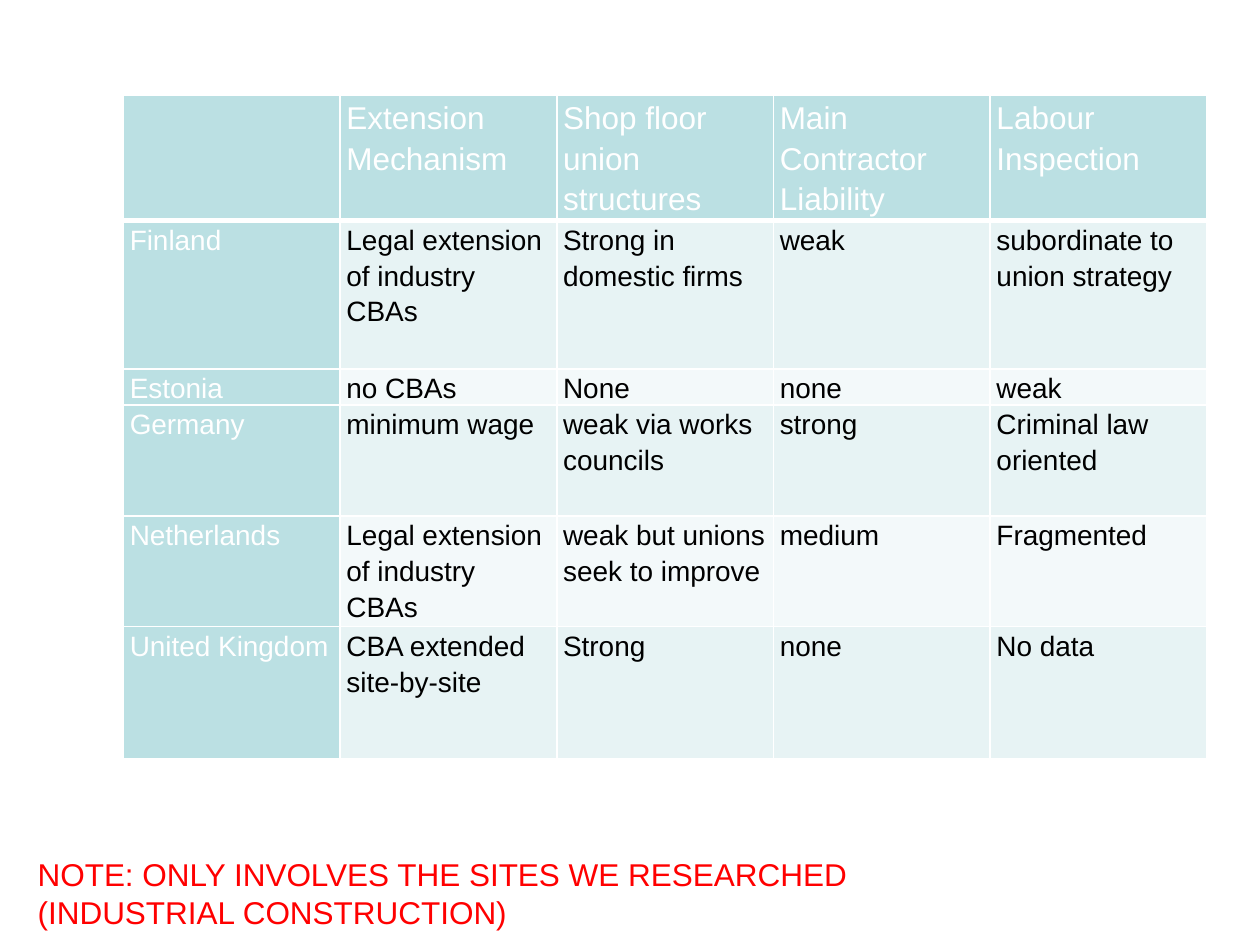
from lxml.etree import SubElement
from pptx import Presentation
from pptx.dml.color import RGBColor
from pptx.enum.text import MSO_AUTO_SIZE
from pptx.oxml.ns import qn
from pptx.util import Inches, Pt

COLORS = {"header": "BBE0E3", "odd": "E7F3F4", "even": "F3F9FA",
          "white": "FFFFFF", "black": "000000", "note": "FF0000"}
FONT = "Arial"
ROWS = [
    ("", "Extension Mechanism", "Shop floor union structures",
     "Main Contractor Liability", "Labour Inspection"),
    ("Finland", "Legal extension of industry CBAs", "Strong in domestic firms",
     "weak", "subordinate to union strategy"),
    ("Estonia", "no CBAs", "None", "none", "weak"),
    ("Germany", "minimum wage", "weak via works councils", "strong",
     "Criminal law oriented"),
    ("Netherlands", "Legal extension of industry CBAs",
     "weak but unions seek to improve", "medium", "Fragmented"),
    ("United Kingdom", "CBA extended site-by-site", "Strong", "none", "No data"),
]
ROW_HEIGHTS = [0.99, 1.18, 0.28, 0.88, 0.88, 1.05]
COL_WIDTH = 1.72
CELL_FORMAT = {"margin_left": Inches(0.05), "margin_right": Inches(0.05),
               "margin_top": 0, "margin_bottom": 0}
NOTE = "NOTE: ONLY INVOLVES THE SITES WE RESEARCHED (INDUSTRIAL CONSTRUCTION)"


def rgb(name):
    return RGBColor.from_string(COLORS[name])


def style_font(font, size, color):
    font.name, font.size = FONT, Pt(size)
    font.color.rgb = rgb(color)


def add_borders(cell, bottom):
    """White borders of 1 pt, with the bottom width given in points."""
    tcPr = cell._tc.get_or_add_tcPr()
    for side, width in (("L", 1), ("R", 1), ("T", 1), ("B", bottom)):
        ln = SubElement(tcPr, qn(f"a:ln{side}"), w=str(Pt(width)))
        fill = SubElement(ln, qn("a:solidFill"))
        SubElement(fill, qn("a:srgbClr"), val=COLORS["white"])


def fill_cell(cell, text, row, col):
    is_header = row == 0 or col == 0
    for name, value in CELL_FORMAT.items():
        setattr(cell, name, value)
    add_borders(cell, 3 if row == 0 else 1)
    cell.fill.solid()
    cell.fill.fore_color.rgb = rgb("header" if is_header else "odd" if row % 2 else "even")
    p = cell.text_frame.paragraphs[0]
    p.line_spacing = 1.15
    if text:
        r = p.add_run()
        r.text = text
        style_font(r.font, 18 if row == 0 else 16, "white" if is_header else "black")


def add_comparison(s):
    n_cols = len(ROWS[0])
    table = s.shapes.add_table(len(ROWS), n_cols, Inches(0.98), Inches(0.76),
                               Inches(COL_WIDTH * n_cols), Inches(sum(ROW_HEIGHTS))).table
    for column in table.columns:
        column.width = Inches(COL_WIDTH)
    for row, (height, texts) in enumerate(zip(ROW_HEIGHTS, ROWS)):
        table.rows[row].height = Inches(height)
        for col, text in enumerate(texts):
            fill_cell(table.cell(row, col), text, row, col)


def add_note(s):
    tf = s.shapes.add_textbox(Inches(0.2), Inches(6.74), Inches(7.09), Inches(0.71)).text_frame
    tf.word_wrap = True
    tf.auto_size = MSO_AUTO_SIZE.SHAPE_TO_FIT_TEXT
    r = tf.paragraphs[0].add_run()
    r.text = NOTE
    style_font(r.font, 18, "note")


def main():
    prs = Presentation()
    prs.slide_width, prs.slide_height = Inches(10), Inches(7.5)
    s = prs.slides.add_slide(prs.slide_layouts[6])
    add_comparison(s)
    add_note(s)
    prs.save("out.pptx")


if __name__ == "__main__":
    main()
